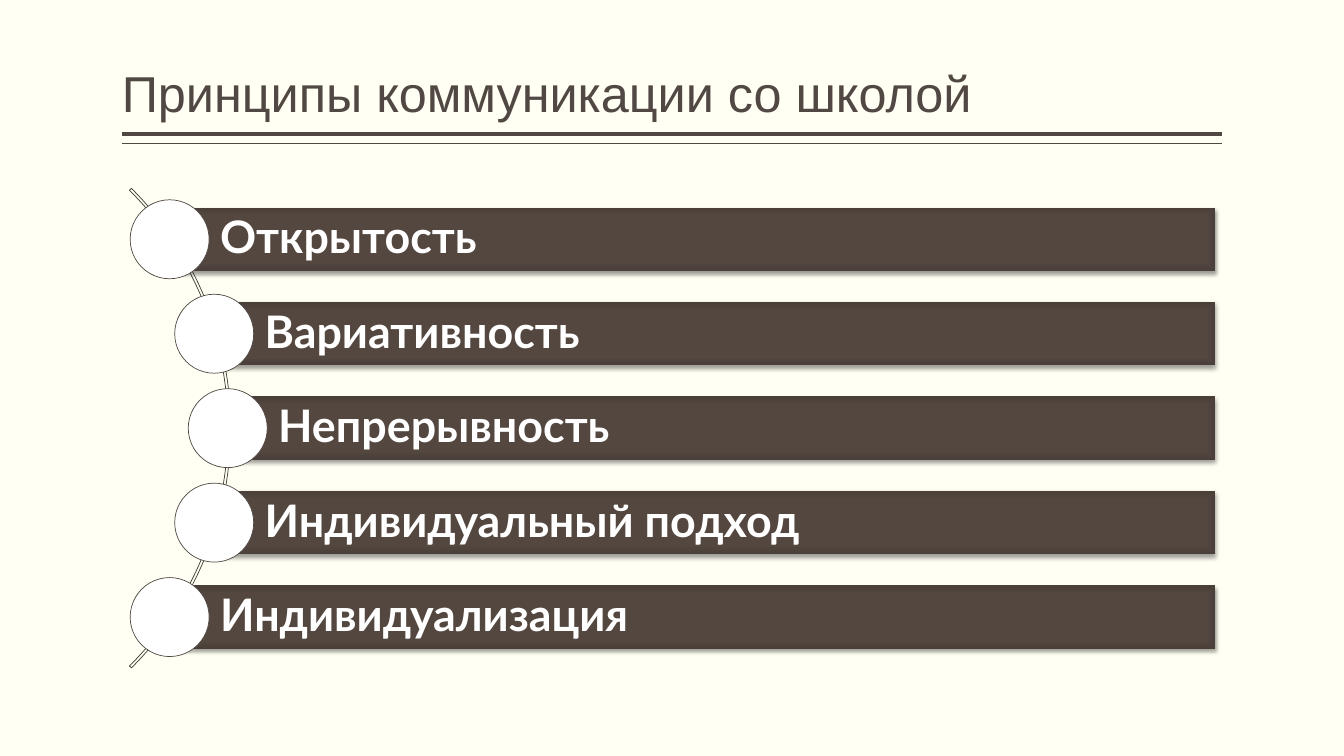
from dataclasses import dataclass
from math import sqrt

from lxml.etree import SubElement
from pptx import Presentation
from pptx.dml.color import RGBColor
from pptx.enum.shapes import MSO_CONNECTOR, MSO_SHAPE
from pptx.enum.text import MSO_ANCHOR, PP_ALIGN
from pptx.oxml.ns import qn
from pptx.util import Cm, Pt


@dataclass(frozen=True)
class Theme:
    paper: str = "FFFFF3"
    ink: str = "514843"
    arc: str = "413A36"
    white: str = "FFFFFF"
    shade: str = "000000"
    bar: tuple = ((0, "544740"), (71, "534740"), (100, "4A3F39"))
    head_font: str = "Arial"
    bar_font: str = "Lato"
    head_size: int = 36
    bar_size: int = 32
    thin: float = 0.5


def color(code):
    return RGBColor.from_string(code)


def node(parent, tag, **attrs):
    return SubElement(parent, qn(tag), {k: str(v) for k, v in attrs.items()})


class Deck:
    def __init__(self, theme):
        self.theme = theme
        self.file = Presentation()
        self.file.slide_width, self.file.slide_height = Cm(33.87), Cm(19.05)
        self.slide = self.file.slides.add_slide(self.file.slide_layouts[6])
        back = self.slide.background.fill
        back.solid()
        back.fore_color.rgb = color(theme.paper)

    def shape(self, kind, left, top, width, height):
        item = self.slide.shapes.add_shape(
            kind, Cm(left), Cm(top), Cm(width), Cm(height))
        item.shadow.inherit = False
        return item

    def outline(self, item, code):
        item.line.color.rgb = color(code)
        item.line.width = Pt(self.theme.thin)

    def label(self, item, text, anchor, insets, font, size, code, bold=False):
        frame = item.text_frame
        frame.word_wrap = True
        frame.vertical_anchor = anchor
        (frame.margin_left, frame.margin_top,
         frame.margin_right, frame.margin_bottom) = map(Cm, insets)
        frame.text = text
        para = frame.paragraphs[0]
        para.alignment = PP_ALIGN.LEFT
        para.line_spacing = 0.9
        style = para.runs[0].font
        style.name, style.size, style.bold = font, Pt(size), bold
        style.color.rgb = color(code)

    def title(self, text, left, top, width, height):
        box = self.slide.shapes.add_textbox(
            Cm(left), Cm(top), Cm(width), Cm(height))
        self.label(box, text, MSO_ANCHOR.BOTTOM, (0, 0.13, 0, 0.13),
                   self.theme.head_font, self.theme.head_size, self.theme.ink)

    def rule(self, left, right, y, weight):
        line = self.slide.shapes.add_connector(
            MSO_CONNECTOR.STRAIGHT, Cm(left), Cm(y), Cm(right), Cm(y))
        line.line.color.rgb = color(self.theme.ink)
        line.line.width = Pt(weight)
        node(line._element.spPr, "a:effectLst")

    def arc(self, mid_x, mid_y, size):
        band = self.shape(MSO_SHAPE.BLOCK_ARC, mid_x - size / 2,
                          mid_y - size / 2, size, size)
        for i, value in enumerate((189, 27, 0.004)):
            band.adjustments[i] = value
        band.fill.background()
        self.outline(band, self.theme.arc)

    def bar(self, text, left, top, width, height):
        item = self.shape(MSO_SHAPE.RECTANGLE, left, top, width, height)
        item.line.fill.background()
        props = item._element.spPr
        # Gradient from the centre to the edges
        grad = node(props, "a:gradFill", rotWithShape=1)
        stops = node(grad, "a:gsLst")
        for place, code in self.theme.bar:
            stop = node(stops, "a:gs", pos=place * 1000)
            node(stop, "a:srgbClr", val=code)
        way = node(grad, "a:path", path="rect")
        node(way, "a:fillToRect", l=50000, t=50000, r=50000, b=50000)
        props.find(qn("a:ln")).addprevious(grad)
        # Soft shadow below
        cast = node(props.find(qn("a:effectLst")), "a:outerShdw",
                    blurRad=Pt(3.1), dist=Pt(2), dir=90 * 60000,
                    algn="ctr", rotWithShape=0)
        tint = node(cast, "a:srgbClr", val=self.theme.shade)
        node(tint, "a:alpha", val=38000)
        self.label(item, text, MSO_ANCHOR.MIDDLE, (1.27, 0.23, 0.23, 0.23),
                   self.theme.bar_font, self.theme.bar_size,
                   self.theme.white, True)

    def dot(self, mid_x, mid_y, size):
        item = self.shape(MSO_SHAPE.OVAL, mid_x - size / 2,
                          mid_y - size / 2, size, size)
        item.fill.solid()
        item.fill.fore_color.rgb = color(self.theme.white)
        self.outline(item, self.theme.ink)


def main():
    deck = Deck(Theme())

    # Heading and double rule
    left, right = 3.07, 30.8
    deck.title("Принципы коммуникации со школой",
               left, 0.2, right - left, 3.05)
    deck.rule(left, right, 3.38, 3)
    deck.rule(left, right, 3.62, 1)

    # Principles strung along the arc
    names = ("Открытость", "Вариативность", "Непрерывность",
             "Индивидуальный подход", "Индивидуализация")
    mid_x, mid_y, radius = -2.73, 10.79, 8.47
    step, end, height = 2.38, 30.63, 1.6
    deck.arc(mid_x, mid_y, 17.09)
    for i, name in enumerate(names):
        drop = (i - len(names) // 2) * step
        x, y = mid_x + sqrt(radius ** 2 - drop ** 2), mid_y + drop
        deck.bar(name, x, y - height / 2, end - x, height)
        deck.dot(x, y, 1.99)

    deck.file.save("out.pptx")


if __name__ == "__main__":
    main()
